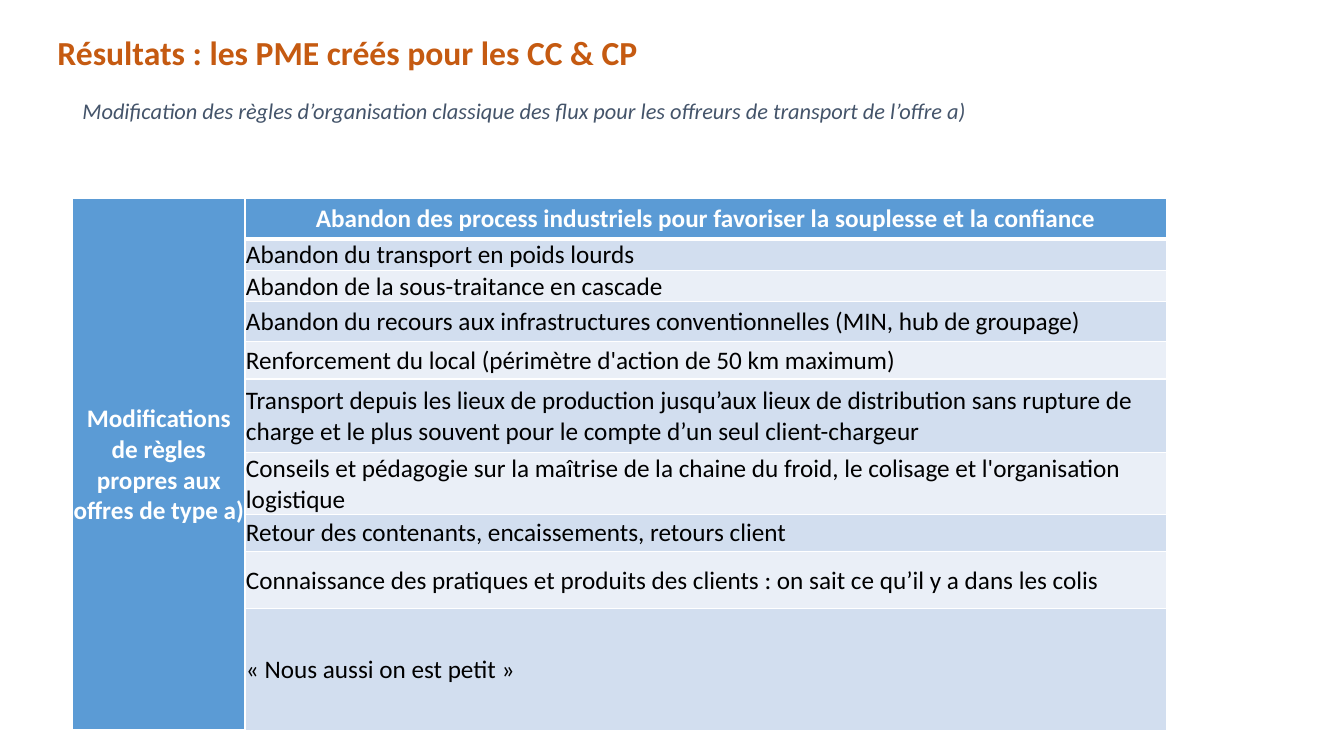
"""Build the slide on rule changes made by type a) transport offers."""
from lxml import etree
from pptx import Presentation
from pptx.dml.color import RGBColor
from pptx.enum.text import MSO_ANCHOR, PP_ALIGN
from pptx.oxml.ns import qn
from pptx.util import Inches, Pt

MIDDLE = MSO_ANCHOR.MIDDLE
LEFT, CENTER = PP_ALIGN.LEFT, PP_ALIGN.CENTER
ORANGE = RGBColor(0xC5, 0x5A, 0x11)
SLATE = RGBColor(0x44, 0x54, 0x6A)
BLUE = RGBColor(0x5B, 0x9B, 0xD5)
BANDS = [RGBColor(0xEA, 0xEF, 0xF7), RGBColor(0xD2, 0xDE, 0xEF)]
WHITE = RGBColor(0xFF, 0xFF, 0xFF)
BLACK = RGBColor(0, 0, 0)

SIDE_HEADING = "Modifications de règles propres aux offres de type a)"
RULES = [
    ("Abandon des process industriels pour favoriser la souplesse et la confiance", 0.4),
    ("Abandon du transport en poids lourds", 0.29),
    ("Abandon de la sous-traitance en cascade", 0.29),
    ("Abandon du recours aux infrastructures conventionnelles (MIN, hub de groupage)", 0.4),
    ("Renforcement du local (périmètre d'action de 50 km maximum)", 0.37),
    ("Transport depuis les lieux de production jusqu’aux lieux de distribution sans rupture de "
     "charge et le plus souvent pour le compte d’un seul client-chargeur", 0.73),
    ("Conseils et pédagogie sur la maîtrise de la chaine du froid, le colisage et l'organisation "
     "logistique", 0.57),
    ("Retour des contenants, encaissements, retours client", 0.37),
    ("Connaissance des pratiques et produits des clients : on sait ce qu’il y a dans les colis", 0.57),
    ("« Nous aussi on est petit »", 0.29),
]
COLUMN_WIDTHS = [1.71, 9.14]


def write(frame, text, size, color, bold=False, italic=False, align=LEFT):
    para = frame.paragraphs[0]
    para.alignment = align
    span = para.add_run()
    span.text = text
    font = span.font
    font.name, font.size, font.bold, font.italic = "Calibri", Pt(size), bold, italic
    font.color.rgb = color
    return para


def style_cell(cell, fill, top, bottom, side_margin):
    cell.fill.solid()
    cell.fill.fore_color.rgb = fill
    cell.vertical_anchor = MIDDLE
    cell.margin_left = cell.margin_right = Inches(side_margin)
    cell.margin_top, cell.margin_bottom = Inches(0.01), 0
    properties = cell._tc.get_or_add_tcPr()
    for index, (side, width) in enumerate([("L", 1), ("R", 1), ("T", top), ("B", bottom)]):
        line = etree.Element(qn(f"a:ln{side}"), w=str(Pt(width)))
        paint = etree.SubElement(line, qn("a:solidFill"))
        etree.SubElement(paint, qn("a:srgbClr"), val=str(WHITE))
        properties.insert(index, line)


deck = Presentation()
deck.slide_width, deck.slide_height = Inches(13.33), Inches(7.5)
page = deck.slides.add_slide(deck.slide_layouts[5])

title = page.shapes.title
title.left, title.top = Inches(0.47), Inches(0.37)
title.width, title.height = Inches(7.64), Inches(0.35)
title.text_frame.vertical_anchor = MIDDLE
write(title.text_frame, "Résultats : les PME créés pour les CC & CP", 24, ORANGE, bold=True).line_spacing = 0.9

subtitle = page.shapes.add_textbox(Inches(0.72), Inches(0.91), Inches(9.1), Inches(0.37))
subtitle.text_frame.word_wrap = False
subtitle.text_frame.vertical_anchor = MIDDLE
write(subtitle.text_frame,
      "Modification des règles d’organisation classique des flux pour les offreurs de transport de l’offre a)",
      16, SLATE, italic=True)

table = page.shapes.add_table(
    len(RULES), len(COLUMN_WIDTHS), Inches(0.72), Inches(1.97),
    Inches(sum(COLUMN_WIDTHS)), Inches(sum(height for _, height in RULES))).table
for column, width in zip(table.columns, COLUMN_WIDTHS):
    column.width = Inches(width)

for index, (rule, height) in enumerate(RULES):
    table.rows[index].height = Inches(height)
    heading = index == 0
    side_cell, rule_cell = table.cell(index, 0), table.cell(index, 1)
    style_cell(side_cell, BLUE, 1, 3 if heading else 1, 0)
    style_cell(rule_cell, BLUE if heading else BANDS[index % 2],
               3 if index == 1 else 1, 3 if heading else 1, 0.01)
    write(rule_cell.text_frame, rule, 18, WHITE if heading else BLACK,
          bold=heading, align=CENTER if heading else LEFT)

side_heading = table.cell(0, 0)
side_heading.merge(table.cell(len(RULES) - 1, 0))
write(side_heading.text_frame, SIDE_HEADING, 18, WHITE, bold=True, align=CENTER)

deck.save("out.pptx")
